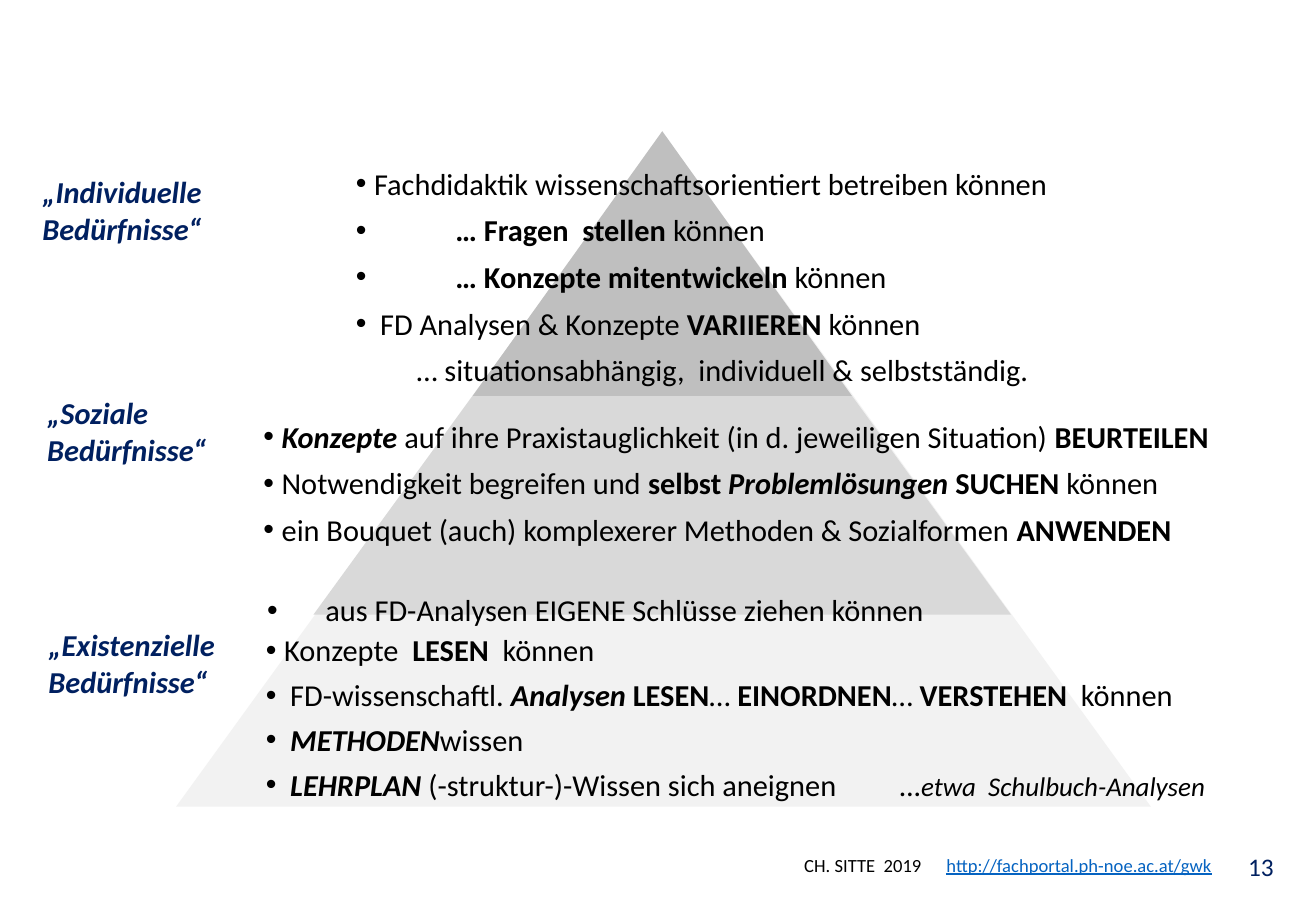
from dataclasses import dataclass

from lxml.etree import SubElement
from pptx import Presentation
from pptx.dml.color import RGBColor as RGB
from pptx.enum.shapes import MSO_SHAPE as SHAPE
from pptx.enum.text import PP_ALIGN as ALIGN
from pptx.oxml.ns import qn
from pptx.util import Inches, Pt


@dataclass(frozen=True)
class Theme:
    font: str = "Calibri"
    text: str = "000000"
    accent: str = "002060"
    link: str = "0563C1"
    body: int = 18
    aside: int = 16
    number: int = 15
    footer: int = 11


THEME = Theme()

PYRAMID = [
    (1.45, 1.10, 8.02, 5.54, "F2F2F2"),
    (2.58, 1.11, 5.74, 3.95, "D9D9D9"),
    (3.89, 1.08, 3.12, 2.18, "BFBFBF"),
]

NEEDS = [
    (0.25, 1.38, 1.61, 0.7, "„Individuelle Bedürfnisse“"),
    (0.29, 3.20, 1.86, 0.7, "„Soziale Bedürfnisse“"),
    (0.30, 5.11, 1.67, 0.7, "„Existenzielle Bedürfnisse“"),
]

NEAR, MIDDLE, FAR, DEEP = 0.15, 0.2, 0.48, 0.82

SKILLS = [
    ((2.09, 5.15, 8.5, 1.51), 5, [
        (NEAR, [("Konzepte  ", ""), ("LESEN", "b"), ("  können", "")]),
        (MIDDLE, [("FD-wissenschaftl. ", ""), ("Analysen", "bi"), (" LESEN", "b"), ("… ", ""),
                  ("EINORDNEN", "b"), ("… ", ""), ("VERSTEHEN", "b"), ("  können", "")]),
        (MIDDLE, [("METHODEN", "bi"), ("wissen", "")]),
        (MIDDLE, [("LEHRPLAN ", "bi"), ("(-struktur-)-Wissen sich aneignen\t", ""),
                  ("…", "i"), ("etwa  Schulbuch-Analysen", "is")]),
    ]),
    ((2.07, 3.39, 8.46, 1.17), 6, [
        (NEAR, [("Konzepte", "bi"), (" auf ihre Praxistauglichkeit (in d. jeweiligen Situation) ", ""),
                ("BEURTEILEN", "b")]),
        (NEAR, [("Notwendigkeit begreifen und ", ""), ("selbst ", "b"), ("Problemlösungen", "bi"),
                (" SUCHEN ", "b"), ("können", "")]),
        (NEAR, [("ein Bouquet (auch) komplexerer Methoden & Sozialformen ", ""), ("ANWENDEN", "b")]),
    ]),
    ((2.1, 4.82, 7.34, 0.4), 0, [
        (FAR, [("aus FD-Analysen EIGENE Schlüsse ziehen können", "")]),
    ]),
    ((2.83, 1.31, 6.39, 1.93), 6, [
        (NEAR, [("Fachdidaktik wissenschaftsorientiert betreiben können", "")]),
        (DEEP, [("… Fragen  stellen ", "b"), ("können", "")]),
        (DEEP, [("… Konzepte mitentwickeln", "b"), (" können", "")]),
        (MIDDLE, [("FD Analysen & Konzepte ", ""), ("VARIIEREN", "b"), (" können", "")]),
        (None, [("… situationsabhängig,  individuell & selbstständig.", "")]),
    ]),
]
CONTINUATION = 0.5
ASIDE_TAB = 5.22

FOOTER = (6.52, 6.98, 3.62, 0.29)
FOOTER_RUNS = [("CH. SITTE  2019\t", ""), ("http://fachportal.ph-noe.ac.at/gwk", "u")]
FOOTER_TAB = 1.17
NUMBER = (7.62, 6.96, 2.96, 0.35)


def add_frame(slide, place):
    frame = slide.shapes.add_textbox(*map(Inches, place)).text_frame
    frame.word_wrap = True
    return frame


def set_indent(paragraph, hang):
    properties = paragraph._p.get_or_add_pPr()
    properties.set("marL", str(Inches(CONTINUATION if hang is None else hang)))
    if hang is not None:
        properties.set("indent", str(-Inches(hang)))
        SubElement(properties, qn("a:buFont"), typeface="Arial")
        SubElement(properties, qn("a:buChar"), char="•")


def set_tab(paragraph, position):
    tabs = SubElement(paragraph._p.get_or_add_pPr(), qn("a:tabLst"))
    SubElement(tabs, qn("a:tab"), pos=str(Inches(position)), algn="l")


def set_font(paragraph, size, colour):
    font = paragraph.font
    font.name, font.size = THEME.font, Pt(size)
    font.color.rgb = RGB.from_string(colour)
    return font


def add_runs(paragraph, runs):
    for text, style in runs:
        run = paragraph.add_run()
        run.text = text
        if "b" in style:
            run.font.bold = True
        if "i" in style:
            run.font.italic = True
        if "s" in style:
            run.font.size = Pt(THEME.aside)
        if "u" in style:
            run.font.underline = True
            run.font.color.rgb = RGB.from_string(THEME.link)


def add_pyramid(slide):
    for *place, colour in PYRAMID:
        layer = slide.shapes.add_shape(SHAPE.ISOSCELES_TRIANGLE, *map(Inches, place))
        layer.shadow.inherit = False
        layer.fill.solid()
        layer.fill.fore_color.rgb = RGB.from_string(colour)
        layer.line.fill.background()


def add_needs(slide):
    for *place, need in NEEDS:
        paragraph = add_frame(slide, place).paragraphs[0]
        paragraph.text = need
        font = set_font(paragraph, THEME.body, THEME.accent)
        font.bold = font.italic = True


def add_skills(slide):
    for place, gap, skills in SKILLS:
        frame = add_frame(slide, place)
        for index, (hang, runs) in enumerate(skills):
            paragraph = frame.add_paragraph() if index else frame.paragraphs[0]
            set_indent(paragraph, hang)
            if any("\t" in text for text, _ in runs):
                set_tab(paragraph, ASIDE_TAB)
            paragraph.space_after = Pt(gap)
            set_font(paragraph, THEME.body, THEME.text)
            add_runs(paragraph, runs)


def add_footer(slide):
    source = add_frame(slide, FOOTER).paragraphs[0]
    set_tab(source, FOOTER_TAB)
    set_font(source, THEME.footer, THEME.text)
    add_runs(source, FOOTER_RUNS)
    number = add_frame(slide, NUMBER).paragraphs[0]
    number.text = "13"
    number.alignment = ALIGN.RIGHT
    set_font(number, THEME.number, THEME.accent)


def main():
    deck = Presentation()
    deck.slide_width, deck.slide_height = Inches(10.83), Inches(7.5)
    slide = deck.slides.add_slide(deck.slide_layouts[6])
    add_pyramid(slide)
    add_needs(slide)
    add_skills(slide)
    add_footer(slide)
    deck.save("out.pptx")


if __name__ == "__main__":
    main()
